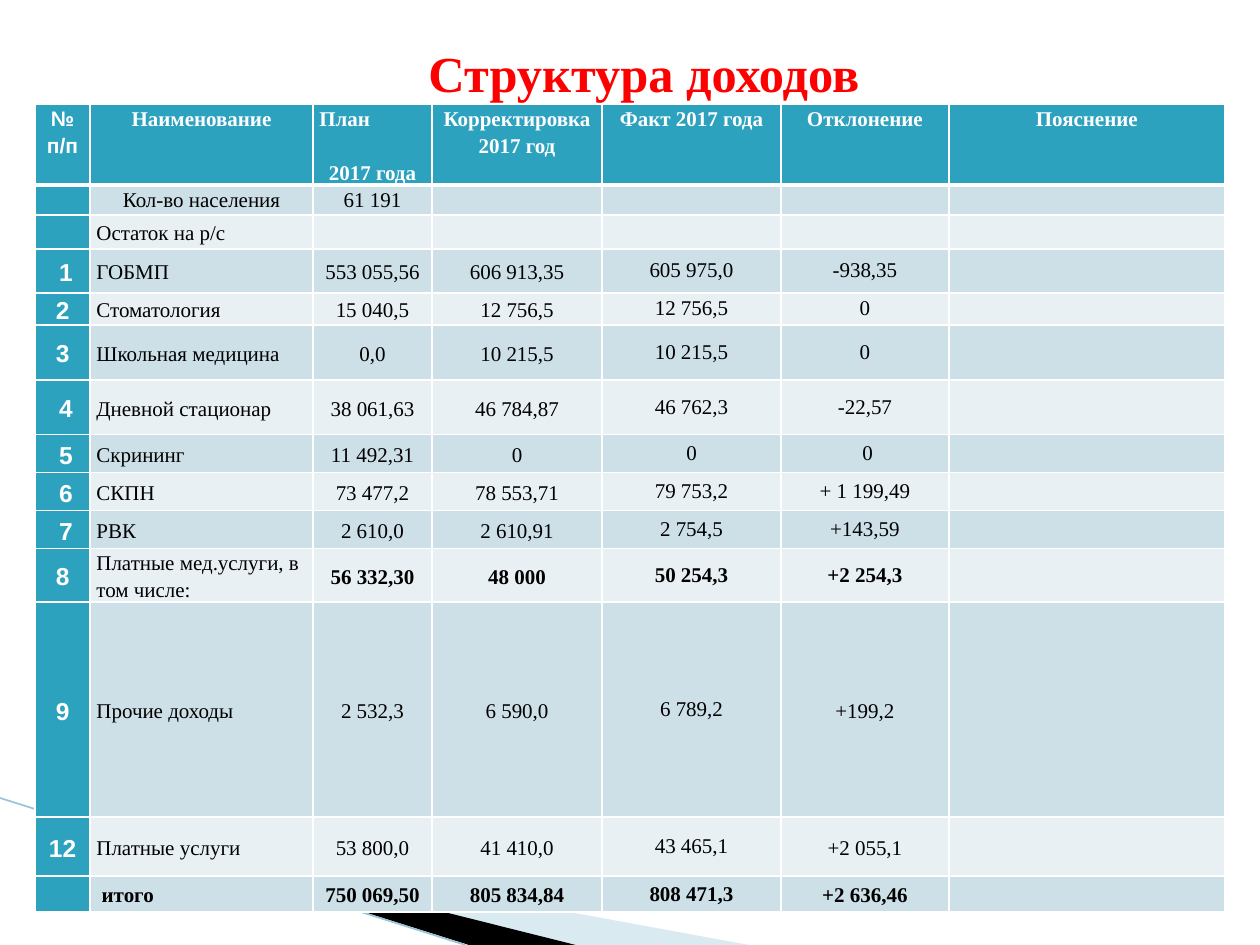
from lxml.etree import SubElement as Sub
from pptx import Presentation
from pptx.dml.color import RGBColor as Rgb
from pptx.enum.shapes import MSO_CONNECTOR as Conn
from pptx.enum.text import MSO_ANCHOR as Anchor, MSO_AUTO_SIZE as Auto, PP_ALIGN as Align
from pptx.oxml.ns import qn
from pptx.util import Pt

# Content: an inner tuple holds separate paragraphs
title = "Структура доходов"
head = ["№ п/п", "Наименование", ("План", "2017 года"), "Корректировка 2017 год",
        "Факт 2017 года", "Отклонение", "Пояснение"]
rows = [
    ["", "Кол-во населения", "61 191", "", "", ""],
    ["", "Остаток на р/с", "", "", "", ""],
    [" 1", "ГОБМП", "553 055,56", "606 913,35", "605 975,0", "-938,35"],
    ["2", "Стоматология", "15 040,5", "12 756,5", "12 756,5", "0"],
    ["3", "Школьная медицина", "0,0", "10 215,5", "10 215,5", "0"],
    [" 4", "Дневной стационар", "38 061,63", "46 784,87", "46 762,3", "-22,57"],
    [" 5", "Скрининг", "11 492,31", "0", "0", " 0"],
    [" 6", "СКПН", "73 477,2", "78 553,71", "79 753,2", "+ 1 199,49"],
    [" 7", "РВК", "2 610,0", "2 610,91", "2 754,5", "+143,59"],
    ["8", "Платные мед.услуги, в том числе:", "56 332,30", "48 000", "50 254,3", "+2 254,3"],
    ["9", "Прочие доходы", "2 532,3", "6 590,0", "6 789,2", "+199,2"],
    ["12", "Платные услуги", "53 800,0", "41 410,0", "43 465,1", "+2 055,1"],
    ["", " итого", "750 069,50", "805 834,84", "808 471,3", "+2 636,46"],
]
grid = [head] + [row + [""] for row in rows]
widths = [31.5, 127.4, 68, 97.2, 102.2, 96, 157.7]
heights = [46.3, 17.1, 19.4, 25.1, 18.3, 31.4, 31.4, 21.7, 21.7, 21.7, 30.3, 122.9, 33.7, 20.6]
wedges = [
    ([(39.6, 468.7), (428.4, 540), (328.3, 540), (39.6, 468)], "pale", 40),
    ([(38.2, 467.3), (329, 540), (267.8, 540), (38.9, 468)], "black", 100),
]
theme = {
    "serif": "Times New Roman", "sans": "Arial",
    "red": "FF0000", "white": "FFFFFF", "black": "000000", "teal": "2DA2BF",
    "odd": "CDE0E8", "even": "E8F0F4", "pale": "A0CBDC", "edge": "97C5D8",
    "title": 28.8, "body": 12, "num": 14, "blank": 8,
}


def tint(name):
    return Rgb.from_string(theme[name])


def style(font, size, color, face="serif", bold=False):
    font.color.rgb = tint(color)
    form = {"size": Pt(theme[size]), "name": theme[face], "bold": bold}
    for key, val in form.items():
        setattr(font, key, val)


def border(cell, low):
    props = cell._tc.get_or_add_tcPr()
    for side, wide in (("L", 1), ("R", 1), ("T", 1), ("B", low)):
        line = Sub(props, qn("a:ln" + side), w=str(Pt(wide)))
        fill = Sub(line, qn("a:solidFill"))
        Sub(fill, qn("a:srgbClr"), val=theme["white"])


def fill_cell(cell, text, r, c):
    top = r == 0
    tight = c == 5 and 3 <= r <= 10
    border(cell, 3 if top else 1)
    cell.fill.solid()
    cell.fill.fore_color.rgb = tint("teal" if top or c == 0 else "odd" if r % 2 else "even")
    side = Pt(0 if tight else 3.6)
    form = {"margin_left": side, "margin_right": side, "margin_top": 0, "margin_bottom": 0,
            "vertical_anchor": Anchor.TOP if r < 2 else Anchor.MIDDLE}
    for key, val in form.items():
        setattr(cell, key, val)
    if not text:
        Sub(cell.text_frame.paragraphs[0]._p, qn("a:endParaRPr"), sz=str(theme["blank"] * 100))
        return
    parts = text if isinstance(text, tuple) else (text,)
    for i, part in enumerate(parts):
        para = cell.text_frame.add_paragraph() if i else cell.text_frame.paragraphs[0]
        left = (c == 1 and r > 1) or i < len(parts) - 1
        para.alignment = Align.LEFT if left else Align.CENTER
        para.line_spacing = 1.0 if tight or (c == 4 and not top) else 1.15
        if i:
            para.space_before = Pt(15.5)
        run = para.add_run()
        run.text = part
        strong = top or c == 0 or r == len(rows) or (r == 10 and c > 1)
        style(run.font, "num" if c == 0 and not top else "body",
              "white" if top or c == 0 else "black", "sans" if c == 0 else "serif", strong)


deck = Presentation()
deck.slide_width, deck.slide_height = Pt(720), Pt(540)
slide = deck.slides.add_slide(deck.slide_layouts[5])
shapes = slide.shapes

# Corner wedges and edge line
for pts, color, alpha in wedges:
    pen = shapes.build_freeform(*pts[0], scale=Pt(1))
    pen.add_line_segments(pts[1:], close=True)
    wedge = pen.convert_to_shape()
    wedge.shadow.inherit = False
    wedge.fill.solid()
    wedge.fill.fore_color.rgb = tint(color)
    wedge.line.fill.background()
    if alpha < 100:
        tone = wedge._element.spPr.find(".//" + qn("a:srgbClr"))
        Sub(tone, qn("a:alpha"), val=str(alpha * 1000))
edge = shapes.add_connector(Conn.STRAIGHT, Pt(0), Pt(456), Pt(266), Pt(540))
edge.line.color.rgb = tint("edge")
edge.line.width = Pt(0.95)
Sub(edge._element.spPr, qn("a:effectLst"))

# Income table
table = shapes.add_table(len(grid), len(widths), Pt(20), Pt(59.5),
                         Pt(sum(widths)), Pt(sum(heights))).table
for col, wide in zip(table.columns, widths):
    col.width = Pt(wide)
for r, (row, high) in enumerate(zip(grid, heights)):
    table.rows[r].height = Pt(high)
    for c, text in enumerate(row):
        fill_cell(table.cell(r, c), text, r, c)

# Title
box = shapes.title
place = {"left": 36, "top": 21.6, "width": 664, "height": 39}
for key, val in place.items():
    setattr(box, key, Pt(val))
frame = box.text_frame
frame.text = title
frame.auto_size = Auto.NONE
frame.vertical_anchor = Anchor.MIDDLE
frame.paragraphs[0].alignment = Align.CENTER
style(frame.paragraphs[0].runs[0].font, "title", "red", bold=True)

deck.save("out.pptx")
